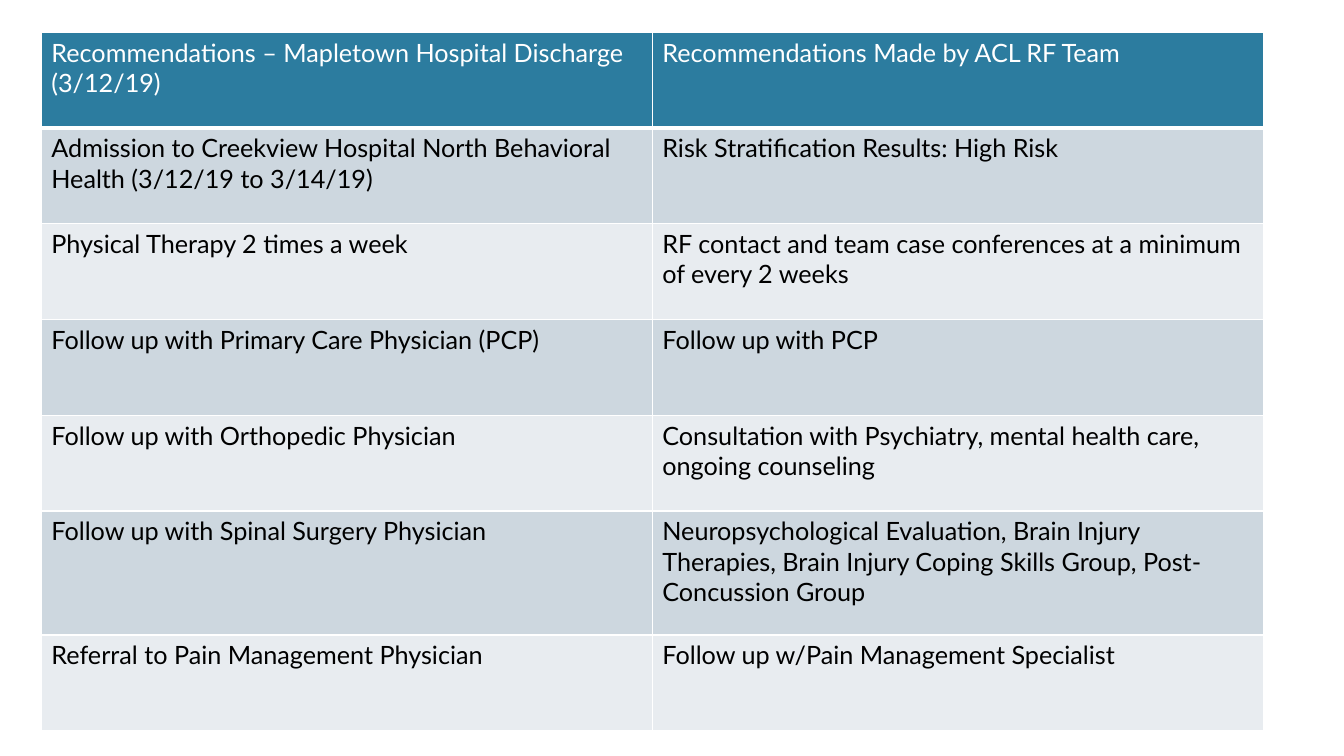
from typing import NamedTuple

from lxml.etree import SubElement
from pptx import Presentation
from pptx.dml.color import RGBColor
from pptx.oxml.ns import qn
from pptx.table import _Cell
from pptx.util import Emu, Pt

EMU_PER_PX = 9144  # 100 px to the inch
BLANK_LAYOUT = 6
BORDER_COLOUR = "FFFFFF"


class RowStyle(NamedTuple):
    fill: str
    text: str
    bottom_border: int


class Recommendation(NamedTuple):
    hospital: str
    team: str
    height: int = 95


HEADER = RowStyle("2C7C9F", "FFFFFF", 3)
BANDS = (RowStyle("CDD7DF", "000000", 1), RowStyle("E8ECF0", "000000", 1))

RECOMMENDATIONS = [
    Recommendation("Recommendations – Mapletown Hospital Discharge (3/12/19)",
                   "Recommendations Made by ACL RF Team"),
    Recommendation("Admission to Creekview Hospital North Behavioral Health (3/12/19 to 3/14/19)",
                   "Risk Stratification Results: High Risk"),
    Recommendation("Physical Therapy 2 times a week",
                   "RF contact and team case conferences at a minimum of every 2 weeks"),
    Recommendation("Follow up with Primary Care Physician (PCP)",
                   "Follow up with PCP"),
    Recommendation("Follow up with Orthopedic Physician",
                   "Consultation with Psychiatry, mental health care, ongoing counseling"),
    Recommendation("Follow up with Spinal Surgery Physician",
                   "Neuropsychological Evaluation, Brain Injury Therapies, "
                   "Brain Injury Coping Skills Group, Post-Concussion Group", 123),
    Recommendation("Referral to Pain Management Physician",
                   "Follow up w/Pain Management Specialist"),
]


def px(length: int) -> Emu:
    return Emu(length * EMU_PER_PX)


def colour(code: str) -> RGBColor:
    return RGBColor.from_string(code)


def add_borders(cell: _Cell, bottom: int) -> None:
    properties = cell._tc.get_or_add_tcPr()
    for side, width in {"L": 1, "R": 1, "T": 1, "B": bottom}.items():
        border = SubElement(properties, qn(f"a:ln{side}"), w=str(Pt(width)))
        fill = SubElement(border, qn("a:solidFill"))
        SubElement(fill, qn("a:srgbClr"), val=BORDER_COLOUR)


def fill_cell(cell: _Cell, wording: str, style: RowStyle) -> None:
    add_borders(cell, style.bottom_border)
    cell.fill.solid()
    cell.fill.fore_color.rgb = colour(style.fill)
    cell.text = wording
    font = cell.text_frame.paragraphs[0].runs[0].font
    for attribute, value in {"name": "Lato", "size": Pt(18), "bold": False}.items():
        setattr(font, attribute, value)
    font.color.rgb = colour(style.text)


def main() -> None:
    presentation = Presentation()
    presentation.slide_width, presentation.slide_height = px(1333), px(750)
    slide = presentation.slides.add_slide(presentation.slide_layouts[BLANK_LAYOUT])

    total_height = sum(row.height for row in RECOMMENDATIONS)
    comparison = slide.shapes.add_table(
        len(RECOMMENDATIONS), 2, px(41), px(32), px(1212), px(total_height)).table
    for index, recommendation in enumerate(RECOMMENDATIONS):
        comparison.rows[index].height = px(recommendation.height)
        style = BANDS[(index - 1) % 2] if index else HEADER
        for column, wording in enumerate((recommendation.hospital, recommendation.team)):
            fill_cell(comparison.cell(index, column), wording, style)

    presentation.save("out.pptx")


if __name__ == "__main__":
    main()
